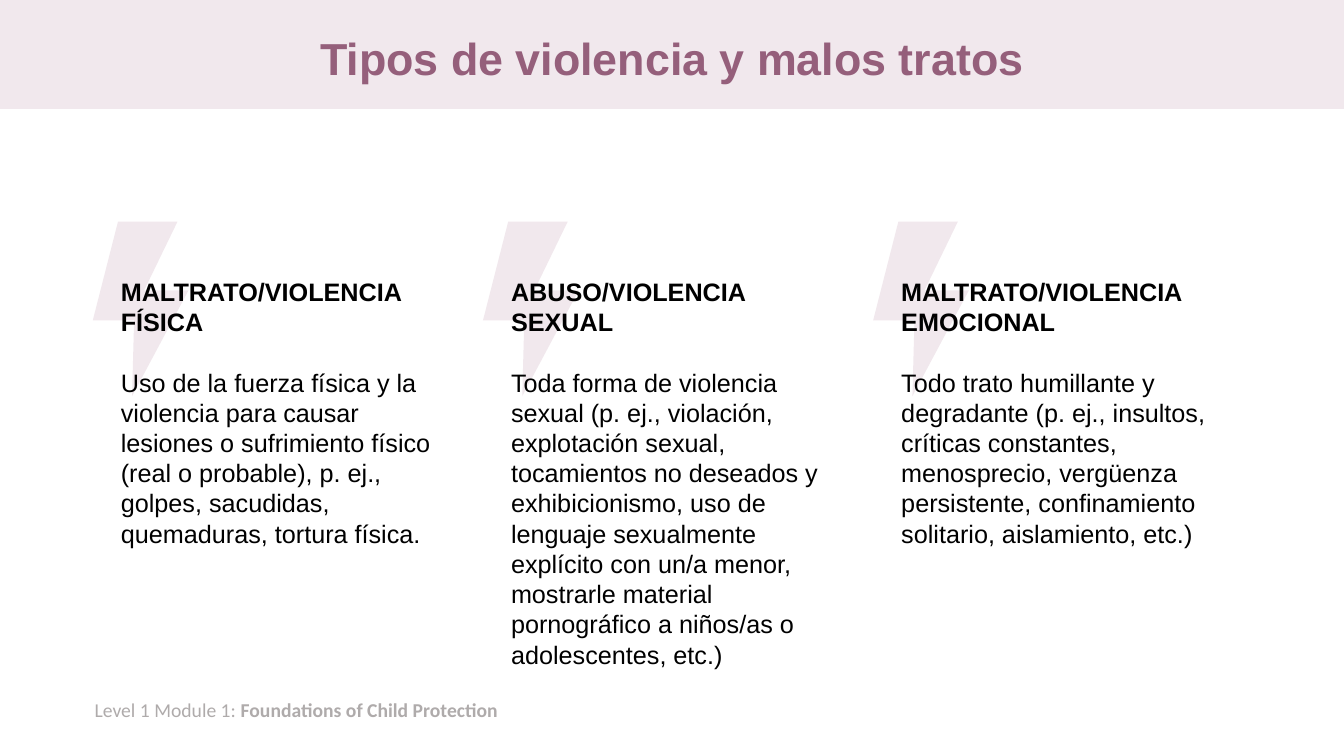
from pptx import Presentation
from pptx.dml.color import RGBColor
from pptx.enum.shapes import MSO_SHAPE
from pptx.enum.text import MSO_ANCHOR, PP_ALIGN
from pptx.util import Inches, Pt

# Content
TITLE = "Tipos de violencia y malos tratos"
FOOTER = [("Level 1 Module 1: ", False), ("Foundations of Child Protection", True)]
COLUMNS = [
    ("MALTRATO/VIOLENCIA FÍSICA",
     "Uso de la fuerza física y la violencia para causar lesiones o sufrimiento "
     "físico (real o probable), p. ej., golpes, sacudidas, quemaduras, tortura física."),
    ("ABUSO/VIOLENCIA SEXUAL",
     "Toda forma de violencia sexual (p. ej., violación, explotación sexual, "
     "tocamientos no deseados y exhibicionismo, uso de lenguaje sexualmente "
     "explícito con un/a menor, mostrarle material pornográfico a niños/as o "
     "adolescentes, etc.)"),
    ("MALTRATO/VIOLENCIA EMOCIONAL",
     "Todo trato humillante y degradante (p. ej., insultos, críticas constantes, "
     "menosprecio, vergüenza persistente, confinamiento solitario, aislamiento, etc.)"),
]

THEME = {
    "pale": RGBColor(0xF1, 0xE8, 0xED),
    "plum": RGBColor(0x95, 0x5F, 0x7B),
    "grey": RGBColor(0xAF, 0xAB, 0xAB),
    "black": RGBColor(0, 0, 0),
    "font": "Arial", "footer_font": "Calibri",
    "title": Pt(32), "body": Pt(18), "footer": Pt(14), "line": Pt(21.6),
}

# Layout in inches
SLIDE_W, SLIDE_H = 13.33, 7.5
COLUMN_STEP = 3.87
BOLT_LEFT, BOLT_TOP = 0.92, 2.2
BOLT = [(0.25, 0), (0.84, 0), (0.51, 0.68), (0.95, 0.68),
        (0.39, 1.73), (0.41, 0.98), (0, 0.98)]
TEXT_LEFT, TEXT_TOP, TEXT_W, TEXT_H = 1.1, 2.69, 3.39, 4.04


def set_font(font, name, size, color, bold=False):
    font.name, font.size, font.bold = name, size, bold
    font.color.rgb = color


def paint(shape):
    shape.fill.solid()
    shape.fill.fore_color.rgb = THEME["pale"]
    shape.line.fill.background()
    shape.shadow.inherit = False


def add_text_box(slide, left, top, width, height):
    box = slide.shapes.add_textbox(Inches(left), Inches(top), Inches(width), Inches(height))
    box.text_frame.word_wrap = True
    return box.text_frame


def add_bolt(slide, left):
    points = [(Inches(left + x), Inches(BOLT_TOP + y)) for x, y in BOLT]
    builder = slide.shapes.build_freeform(*points[0])
    builder.add_line_segments(points[1:], close=True)
    paint(builder.convert_to_shape())


def add_column(slide, left, heading, description):
    tf = add_text_box(slide, left, TEXT_TOP, TEXT_W, TEXT_H)
    head, body = tf.paragraphs[0], tf.add_paragraph()
    for p, text, bold in ((head, heading, True), (body, description, False)):
        p.text = text
        p.line_spacing = THEME["line"]
        set_font(p.font, THEME["font"], THEME["body"], THEME["black"], bold)
    body.space_before = THEME["line"]


def main():
    prs = Presentation()
    prs.slide_width, prs.slide_height = Inches(SLIDE_W), Inches(SLIDE_H)
    slide = prs.slides.add_slide(prs.slide_layouts[5])

    # Header band, kept behind the title
    band = slide.shapes.add_shape(MSO_SHAPE.RECTANGLE, 0, 0, prs.slide_width, Inches(1.08))
    paint(band)
    title = slide.shapes.title
    band._element.addnext(title._element)
    title.left, title.top = Inches(0.92), Inches(0.13)
    title.width, title.height = Inches(11.5), Inches(0.95)
    tf = title.text_frame
    tf.vertical_anchor = MSO_ANCHOR.MIDDLE
    p = tf.paragraphs[0]
    p.text, p.alignment, p.line_spacing = TITLE, PP_ALIGN.CENTER, 0.9
    set_font(p.font, THEME["font"], THEME["title"], THEME["plum"], True)

    # Footer
    p = add_text_box(slide, 0.84, 6.87, 11.35, 0.34).paragraphs[0]
    for text, bold in FOOTER:
        r = p.add_run()
        r.text = text
        set_font(r.font, THEME["footer_font"], THEME["footer"], THEME["grey"], bold)

    # Three types, each over a lightning bolt
    for i, (heading, description) in enumerate(COLUMNS):
        add_bolt(slide, BOLT_LEFT + i * COLUMN_STEP)
        add_column(slide, TEXT_LEFT + i * COLUMN_STEP, heading, description)

    prs.save("out.pptx")


if __name__ == "__main__":
    main()
